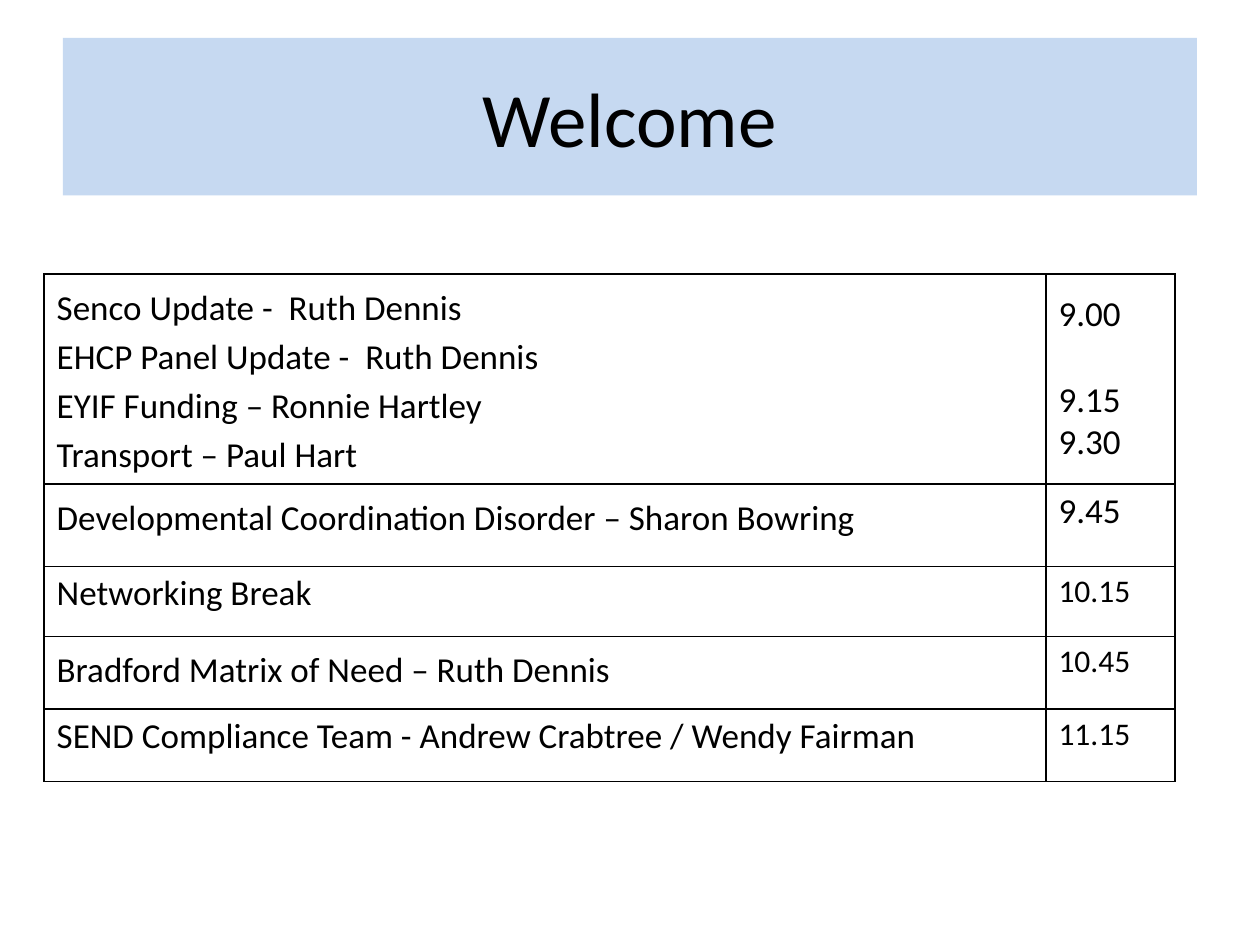
"""Build the welcome slide with the meeting agenda table."""
from lxml import etree
from pptx import Presentation
from pptx.dml.color import RGBColor
from pptx.enum.shapes import MSO_SHAPE
from pptx.enum.text import MSO_ANCHOR, PP_ALIGN
from pptx.oxml.ns import qn
from pptx.util import Pt

RECTANGLE = MSO_SHAPE.RECTANGLE
MIDDLE = MSO_ANCHOR.MIDDLE
CENTER = PP_ALIGN.CENTER
FONT = "Calibri"
BLACK = "000000"
PALE_BLUE = "C6D9F1"
COLUMN_WIDTHS = [572.5, 73.75]
BORDER_TAGS = ["a:lnL", "a:lnR", "a:lnT", "a:lnB"]

# Each row: height, topics, topic line spacing, times, time size
AGENDA = [
    (120, ["Senco Update -  Ruth Dennis", "EHCP Panel Update -  Ruth Dennis",
           "EYIF Funding – Ronnie Hartley", "Transport – Paul Hart"],
     1.15, ["9.00", "9.15", "9.30"], 20),
    (47, ["Developmental Coordination Disorder – Sharon Bowring"], 1.15, ["9.45"], 20),
    (40, ["Networking Break"], 1, ["10.15"], 18),
    (41.5, ["Bradford Matrix of Need – Ruth Dennis"], 1.15, ["10.45"], 18),
    (41.5, ["SEND Compliance Team - Andrew Crabtree / Wendy Fairman"], 1, ["11.15"], 18),
]


def color(hex_code):
    return RGBColor.from_string(hex_code)


def write_lines(frame, lines, size, spacing=1):
    for index, line in enumerate(lines):
        paragraph = frame.add_paragraph() if index else frame.paragraphs[0]
        paragraph.line_spacing = spacing
        run = paragraph.add_run()
        run.text = line
        run.font.name = FONT
        run.font.size = Pt(size)
        run.font.color.rgb = color(BLACK)


deck = Presentation()
deck.slide_width, deck.slide_height = Pt(720), Pt(540)
slide = deck.slides.add_slide(deck.slide_layouts[6])

banner = slide.shapes.add_shape(RECTANGLE, Pt(36), Pt(21.6), Pt(648), Pt(90))
banner.shadow.inherit = False
banner.fill.solid()
banner.fill.fore_color.rgb = color(PALE_BLUE)
banner.line.fill.background()
banner.text_frame.word_wrap = True
banner.text_frame.vertical_anchor = MIDDLE
write_lines(banner.text_frame, ["Welcome"], 44)
banner.text_frame.paragraphs[0].alignment = CENTER

agenda = slide.shapes.add_table(
    len(AGENDA), len(COLUMN_WIDTHS), Pt(25.2), Pt(156.6),
    Pt(sum(COLUMN_WIDTHS)), Pt(sum(row[0] for row in AGENDA))).table
agenda.first_row = False
agenda.horz_banding = False
for column, width in zip(agenda.columns, COLUMN_WIDTHS):
    column.width = Pt(width)

for row, (height, topics, spacing, times, time_size) in enumerate(AGENDA):
    agenda.rows[row].height = Pt(height)
    topic_cell, time_cell = agenda.cell(row, 0), agenda.cell(row, 1)
    write_lines(topic_cell.text_frame, topics, 20, spacing)
    write_lines(time_cell.text_frame, times, time_size)
    for cell in (topic_cell, time_cell):
        properties = cell._tc.get_or_add_tcPr()
        for tag in BORDER_TAGS:
            border = etree.SubElement(properties, qn(tag), w=str(Pt(1)))
            fill = etree.SubElement(border, qn("a:solidFill"))
            etree.SubElement(fill, qn("a:srgbClr"), val=BLACK)
        cell.fill.background()

opening_times = agenda.cell(0, 1)
opening_times.margin_top = Pt(10.9)
opening_times.text_frame.paragraphs[1].space_before = Pt(24.4)

deck.save("out.pptx")
